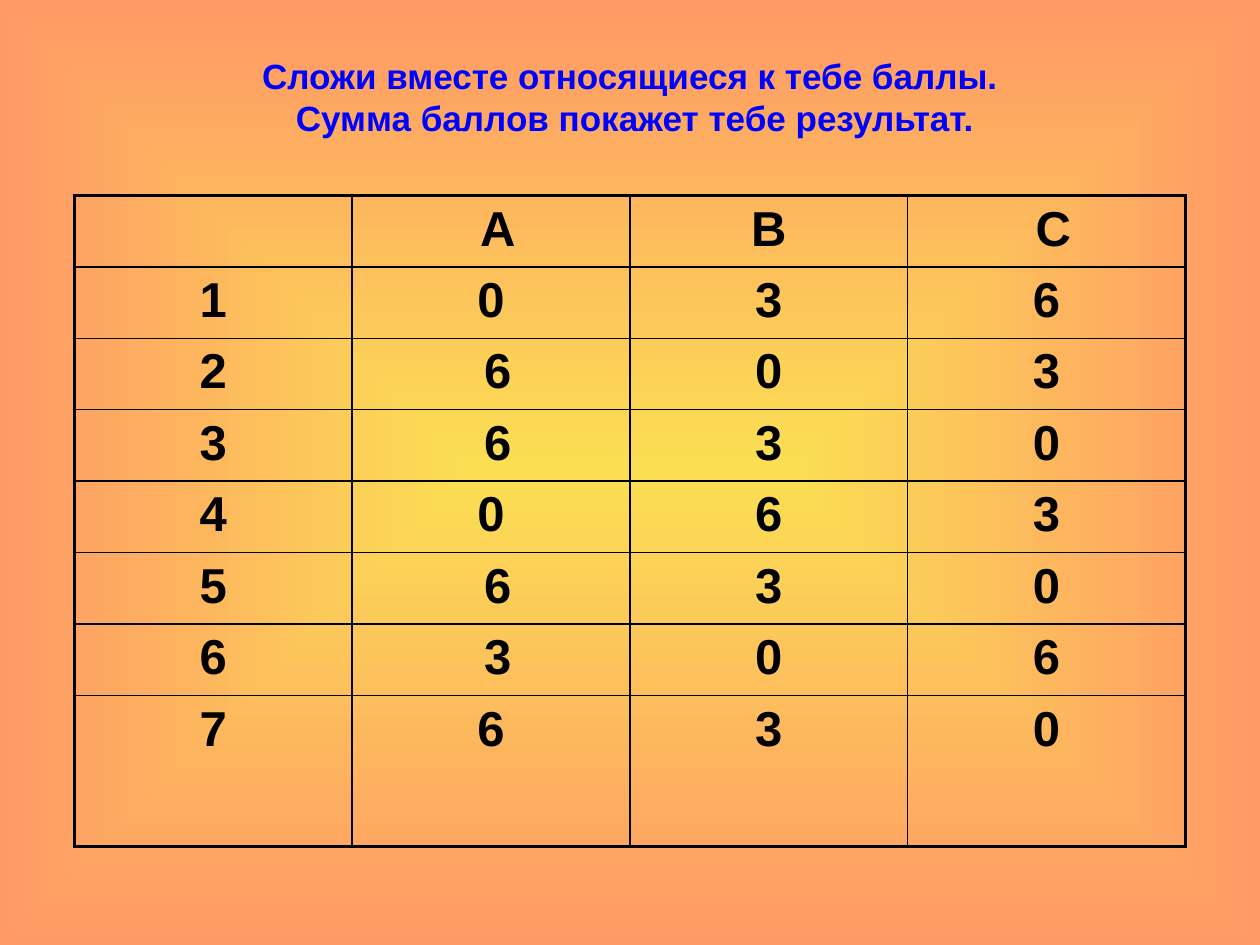
from dataclasses import dataclass

from lxml import etree
from pptx import Presentation
from pptx import util as u
from pptx.dml.color import RGBColor
from pptx.enum import text
from pptx.oxml import ns


@dataclass(frozen=True)
class Theme:
    """Colours, font and type sizes of the slide."""
    font: str = "Arial"
    center: str = "FBDF53"
    edge: str = "FF9966"
    title: str = "0000FF"
    ink: str = "000000"
    title_size: int = 20
    cell_size: int = 28
    inner: float = 1
    outer: float = 2.25


TITLE = ["Сложи вместе относящиеся к тебе баллы.",
         " Сумма баллов покажет тебе результат."]
SCORES = [
    ["", " А", "В", " С"],
    ["1", "0", "3", "6"],
    ["2", " 6", "0", "3"],
    ["3", " 6", "3", "0"],
    ["4", " 0 ", "6", "3"],
    ["5", " 6", "3", "0"],
    ["6", " 3", "0", "6"],
    ["7", " 6 ", "3", "0"],
]


class Deck:
    """Holds the theme and the current slide and adds elements to it."""

    def __init__(self, prs, theme):
        self.theme = theme
        self.s = prs.slides.add_slide(prs.slide_layouts[5])

    def apply(self, obj, values):
        """Set every attribute named in values."""
        for name, value in values.items():
            setattr(obj, name, value)

    def add_text(self, p, content, size, color):
        """Put one bold centred run into a paragraph."""
        p.alignment = text.PP_ALIGN.CENTER
        r = p.add_run()
        r.text = content
        self.apply(r.font, {"name": self.theme.font, "size": u.Pt(size), "bold": True})
        r.font.color.rgb = RGBColor.from_string(color)

    def background(self):
        """Fill the slide with a gradient that spreads from its centre."""
        fill = self.s.background.fill
        fill.gradient()
        for stop, color, position in zip(
                fill.gradient_stops, (self.theme.center, self.theme.edge), (0, 1)):
            stop.color.rgb = RGBColor.from_string(color)
            stop.position = position
        grad = next(self.s.element.iter(ns.qn("a:gradFill")))
        grad.remove(grad.find(ns.qn("a:lin")))
        shade = etree.SubElement(grad, ns.qn("a:path"), {"path": "shape"})
        etree.SubElement(shade, ns.qn("a:fillToRect"),
                         {side: "50000" for side in "ltrb"})

    def title(self, lines, left, top, width, height):
        """Place the title, with room kept free under its lines."""
        sp = self.s.shapes.title
        self.apply(sp, {"left": u.Cm(left), "top": u.Cm(top),
                        "width": u.Cm(width), "height": u.Cm(height)})
        tf = sp.text_frame
        self.apply(tf, {"word_wrap": True, "margin_bottom": u.Cm(0.95),
                        "auto_size": text.MSO_AUTO_SIZE.NONE,
                        "vertical_anchor": text.MSO_ANCHOR.MIDDLE})
        for i, line in enumerate(lines):
            p = tf.add_paragraph() if i else tf.paragraphs[0]
            self.apply(p, {"space_before": u.Pt(0), "space_after": u.Pt(0)})
            self.add_text(p, line, self.theme.title_size, self.theme.title)

    def borders(self, cell, outer_sides):
        """Draw the four cell borders, heavier on the outer sides."""
        props = cell._tc.get_or_add_tcPr()
        for i, side in enumerate("LRTB"):
            width = self.theme.outer if side in outer_sides else self.theme.inner
            ln = etree.Element(ns.qn(f"a:ln{side}"), w=str(u.Pt(width)))
            fill = etree.SubElement(ln, ns.qn("a:solidFill"))
            etree.SubElement(fill, ns.qn("a:srgbClr"), val=self.theme.ink)
            props.insert(i, ln)

    def table(self, data, left, top, col_width, row_heights):
        """Add a transparent ruled table."""
        rows, cols = len(data), len(data[0])
        tbl = self.s.shapes.add_table(
            rows, cols, u.Cm(left), u.Cm(top),
            u.Cm(col_width * cols), u.Cm(sum(row_heights))).table
        self.apply(tbl, {"first_row": False, "horz_banding": False})
        for col in tbl.columns:
            col.width = u.Cm(col_width)
        for i, values in enumerate(data):
            tbl.rows[i].height = u.Cm(row_heights[i])
            for j, value in enumerate(values):
                cell = tbl.cell(i, j)
                cell.fill.background()
                edges = {"L": j == 0, "R": j == cols - 1,
                         "T": i == 0, "B": i == rows - 1}
                self.borders(cell, [side for side, outer in edges.items() if outer])
                if value:
                    self.add_text(cell.text_frame.paragraphs[0], value,
                                  self.theme.cell_size, self.theme.ink)


def main():
    """Build the score slide."""
    prs = Presentation()
    prs.slide_width, prs.slide_height = u.Cm(25.4), u.Cm(19.05)
    deck = Deck(prs, Theme())
    deck.background()
    deck.title(TITLE, 1.27, 0.76, 22.86, 3.18)
    deck.table(SCORES, 1.5, 3.94, 5.6, [1.44] * 7 + [3.05])
    prs.save("out.pptx")


if __name__ == "__main__":
    main()
